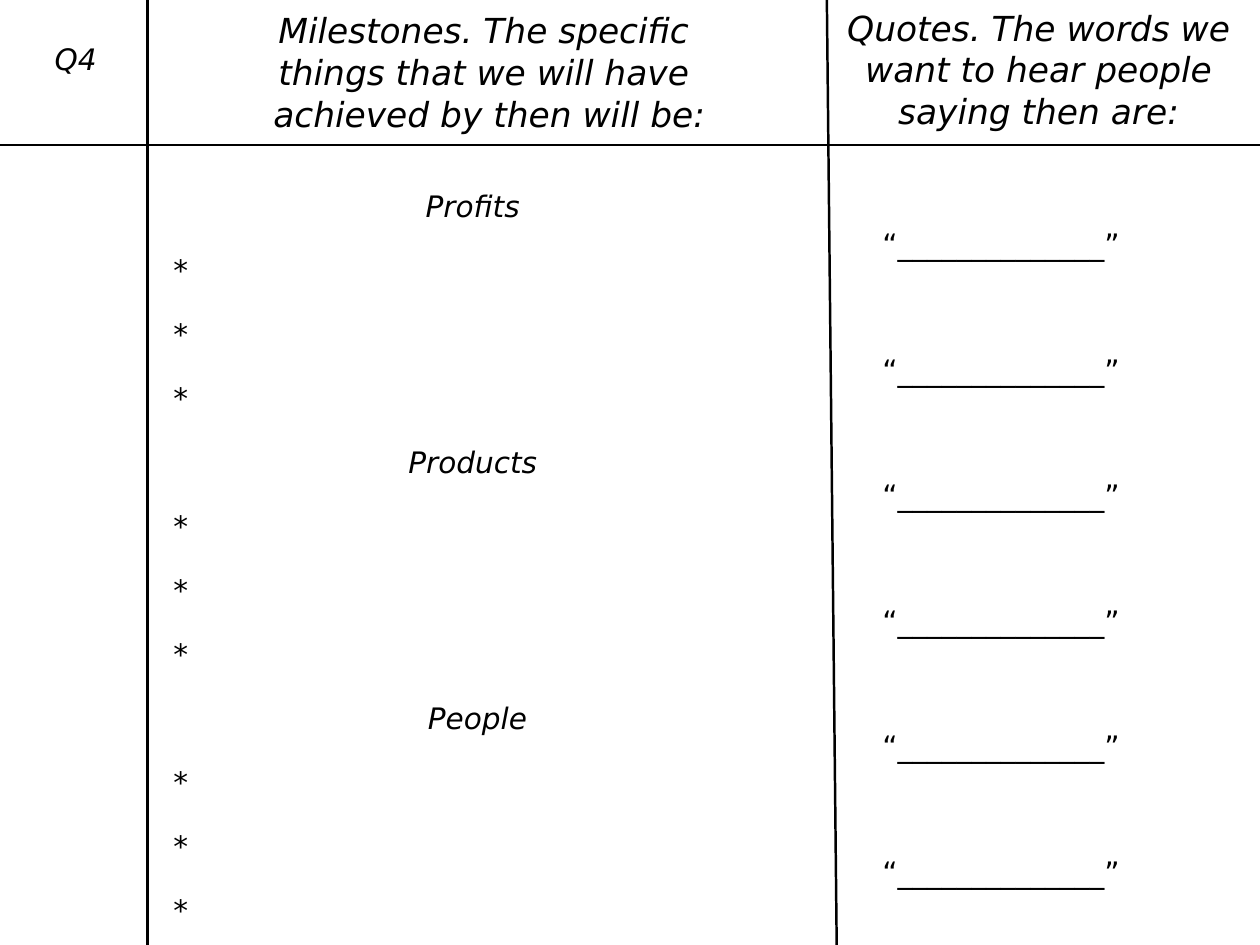
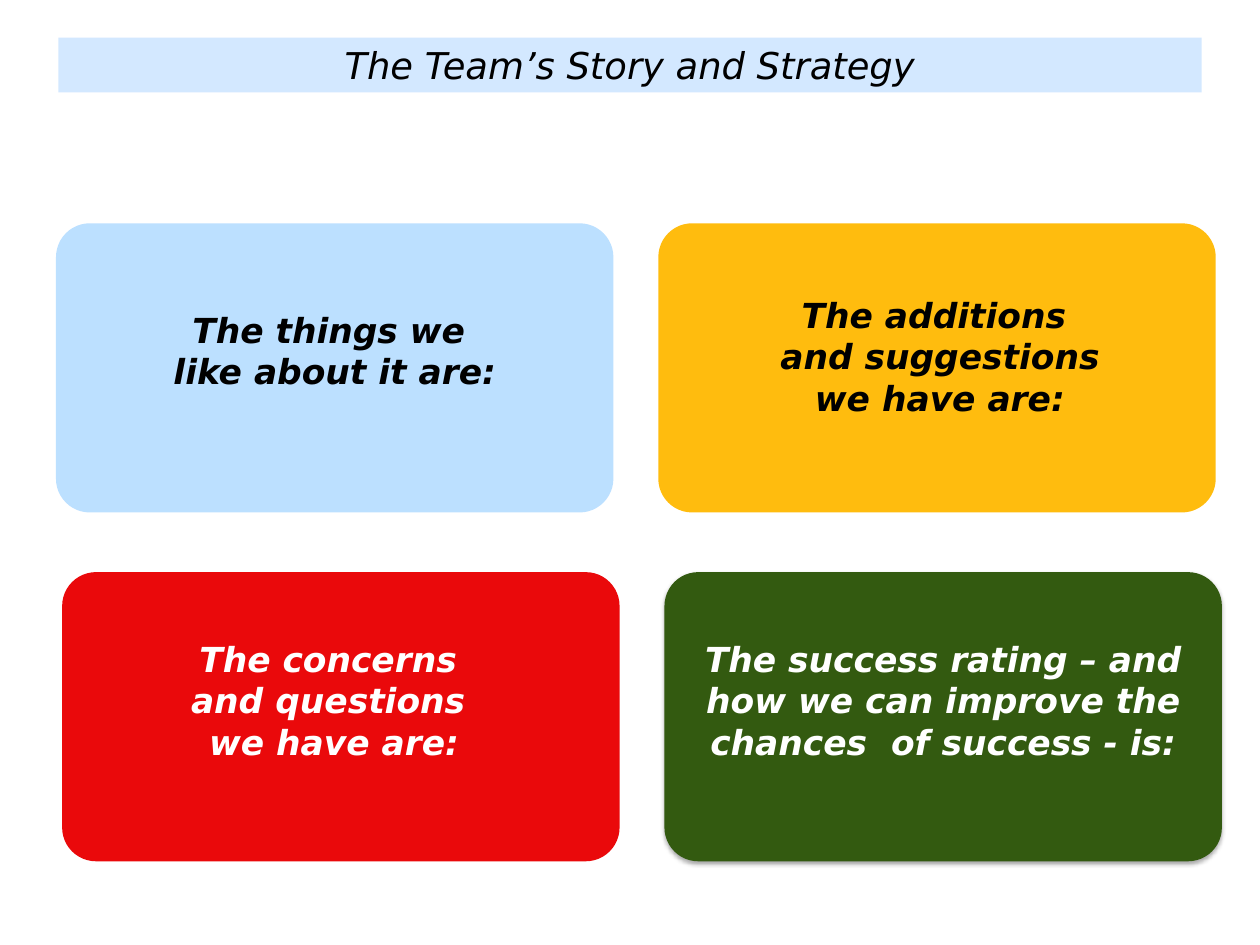
"""Build a quarterly milestones sheet and a team strategy review slide."""
from lxml.etree import SubElement
from pptx import Presentation
from pptx.dml.color import RGBColor
from pptx.enum.shapes import MSO_CONNECTOR, MSO_SHAPE
from pptx.enum.text import MSO_ANCHOR, MSO_AUTO_SIZE, PP_ALIGN
from pptx.oxml.ns import qn
from pptx.util import Pt

COLORS = {
    "black": "000000",
    "white": "FFFFFF",
    "band": "D3E8FF",
    "likes": "BCE0FF",
    "additions": "FFBC0E",
    "concerns": "EA090B",
    "rating": "335A10",
}
FONT = "DejaVu Sans"
WIDTH, HEIGHT = 1024, 768


def fill_solid(shape, color):
    shape.fill.solid()
    shape.fill.fore_color.rgb = RGBColor.from_string(COLORS[color])


def write(shape, box, text, size, color="black", bold=False, italic=True,
          align=PP_ALIGN.CENTER, spacing=1.0, before=0, inset=5):
    shape.left, shape.top, shape.width, shape.height = [Pt(value) for value in box]
    frame = shape.text_frame
    frame.text = text
    frame.word_wrap = True
    frame.auto_size = MSO_AUTO_SIZE.NONE
    frame.vertical_anchor = MSO_ANCHOR.TOP
    frame.margin_left = frame.margin_right = Pt(inset)
    frame.margin_top = frame.margin_bottom = Pt(inset)
    for paragraph in frame.paragraphs:
        paragraph.alignment = align
        paragraph.line_spacing = spacing
        paragraph.space_before = Pt(before)
        properties = paragraph._p.get_or_add_pPr()
        properties.set("marL", "0")
        properties.set("indent", "0")
        SubElement(properties, qn("a:buNone"))
        for run in paragraph.runs:
            run.font.name = FONT
            run.font.size = Pt(size)
            run.font.bold = bold
            run.font.italic = italic
            run.font.color.rgb = RGBColor.from_string(COLORS[color])


presentation = Presentation()
presentation.slide_width = Pt(WIDTH)
presentation.slide_height = Pt(HEIGHT)

slide = presentation.slides.add_slide(presentation.slide_layouts.get_by_name("Comparison"))
quarter, milestones_header, milestones, quotes_header, quotes = slide.placeholders

write(quarter, (0, 34, 123, 40), "Q4", 24, spacing=0.8)
write(milestones_header, (123, 2, 549, 112),
      "Milestones. The specific \vthings that we will have \vachieved by then will be:",
      28, spacing=Pt(34))
write(quotes_header, (672, 0, 344, 112),
      "Quotes. The words we want to hear people saying then are:", 28, spacing=Pt(34))
for header in (quarter, milestones_header, quotes_header):
    fill_solid(header, "white")

topics = ["Profits ", "Products ", "People"]
lines = [line for topic in topics for line in (topic, "*", "*", "*")]
write(milestones, (136, 124.5, 504, 636.5), "\n".join(lines), 24, spacing=Pt(52))
for paragraph in milestones.text_frame.paragraphs:
    if paragraph.text == "*":
        paragraph.alignment = PP_ALIGN.LEFT
        paragraph.runs[0].font.italic = False

write(quotes, (712, 162.5, 304, 605.5), "\n".join(["“______________”"] * 6), 24,
      italic=False, align=PP_ALIGN.LEFT, spacing=Pt(45), before=57)
quotes.text_frame.paragraphs[0].space_before = Pt(6)

rules = [
    (0, 118, WIDTH, 118),
    (120, HEIGHT, 120, 0),
    (680, HEIGHT, 672, 0),
]
for ends in rules:
    rule = slide.shapes.add_connector(MSO_CONNECTOR.STRAIGHT, *[Pt(value) for value in ends])
    rule.line.color.rgb = RGBColor.from_string(COLORS["black"])
    rule.line.width = Pt(2)
    SubElement(rule._element.spPr, qn("a:effectLst"))

slide = presentation.slides.add_slide(presentation.slide_layouts.get_by_name("Title Only"))
title = slide.shapes.title
write(title, (47.5, 30.5, 929, 44.5), "The Team’s Story and Strategy", 30, inset=4.5)
fill_solid(title, "band")

CARD_WIDTH, CARD_HEIGHT = 453, 235
cards = [
    ("likes", "black", 45.5, 453, 246, 78, "The things we \nlike about it are:"),
    ("additions", "black", 535, 448, 234, 112,
     "The additions\n and suggestions\n we have are:"),
    ("concerns", "white", 47.5, 448, 513.5, 112,
     "The concerns \nand questions \nwe have are:"),
    ("rating", "white", 540, 453, 513.5, 112,
     "The success rating – and how we can improve the chances  of success - is:"),
]
for index, (fill, ink, left, width, top, height, text) in enumerate(cards):
    row, column = divmod(index, 2)
    card = slide.shapes.add_shape(
        MSO_SHAPE.ROUNDED_RECTANGLE,
        Pt(45.5 + 489.5 * column + 5 * row), Pt(181.5 + 283.5 * row),
        Pt(CARD_WIDTH), Pt(CARD_HEIGHT))
    card.adjustments[0] = 0.117
    fill_solid(card, fill)
    card.line.fill.background()
    card.shadow.inherit = False
    if fill == "rating":
        effects = card._element.spPr.find(qn("a:effectLst"))
        shadow = SubElement(effects, qn("a:outerShdw"), blurRad=str(Pt(4)),
                            dist=str(Pt(2)), dir="5400000", rotWithShape="0")
        tint = SubElement(shadow, qn("a:srgbClr"), val=COLORS["black"])
        SubElement(tint, qn("a:alpha"), val="35000")
    label = slide.shapes.add_textbox(0, 0, 0, 0)
    write(label, (left, top, width, height), text, 28, color=ink, bold=True)

presentation.save("out.pptx")
